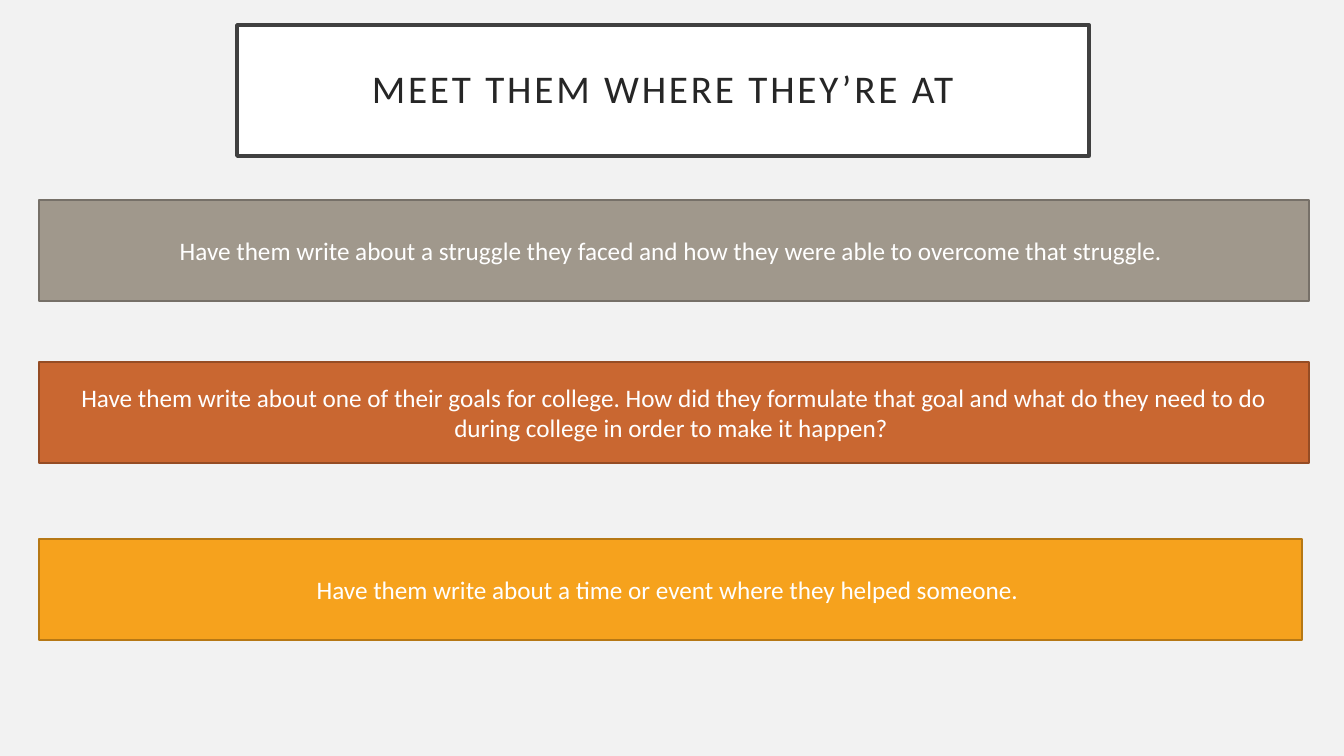
from pptx import Presentation, util as u
from pptx.dml.color import RGBColor
from pptx.enum import shapes, text

PX = 914400 / 100.8


def rgb(color):
    return RGBColor.from_string(color)


def add_box(slide, words, *, at, fill, line, line_width=1, size=18,
            color="FFFFFF", inset=None, line_spacing=None, tracking=None):
    """Add a rectangle with centred text; at is left, top, width, height in px."""
    box = slide.shapes.add_shape(shapes.MSO_SHAPE.RECTANGLE,
                                 *(round(value * PX) for value in at))
    box.shadow.inherit = False
    box.fill.solid()
    box.fill.fore_color.rgb = rgb(fill)
    box.line.color.rgb = rgb(line)
    box.line.width = u.Pt(line_width)

    frame = box.text_frame
    frame.word_wrap = True
    frame.vertical_anchor = text.MSO_ANCHOR.MIDDLE
    if inset is not None:
        frame.margin_left = frame.margin_right = round(inset * PX)
        frame.margin_top = frame.margin_bottom = round(inset * PX)

    paragraph = frame.paragraphs[0]
    paragraph.alignment = text.PP_ALIGN.CENTER
    paragraph.line_spacing = line_spacing
    run = paragraph.add_run()
    run.text = words
    run.font.name = "Calibri"
    run.font.size = u.Pt(size)
    run.font.color.rgb = rgb(color)
    if tracking is not None:
        run.font._element.set("spc", str(tracking * 100))


deck = Presentation()
deck.slide_width = round(1344 * PX)
deck.slide_height = round(756 * PX)
slide = deck.slides.add_slide(deck.slide_layouts[6])
slide.background.fill.solid()
slide.background.fill.fore_color.rgb = rgb("F2F2F2")

add_box(slide, "MEET THEM WHERE THEY’RE AT", at=(237, 25, 852, 131),
        fill="FFFFFF", line="404040", line_width=2.5, size=28, color="262626",
        inset=20, line_spacing=0.9, tracking=2)

# Top, width, fill, outline, wording
prompts = [
    (200, 1270, "A0988C", "767068",
     "Have them write about a struggle they faced and how they were able to "
     "overcome that struggle. "),
    (362, 1270, "C96731", "954C24",
     "Have them write about one of their goals for college. How did they "
     "formulate that goal and what do they need to do during college in order "
     "to make it happen? "),
    (539, 1263, "F6A21D", "B67815",
     "Have them write about a time or event where they helped someone. "),
]
for top, width, fill, outline, words in prompts:
    add_box(slide, words, at=(39, top, width, 101), fill=fill, line=outline)

deck.save("out.pptx")
